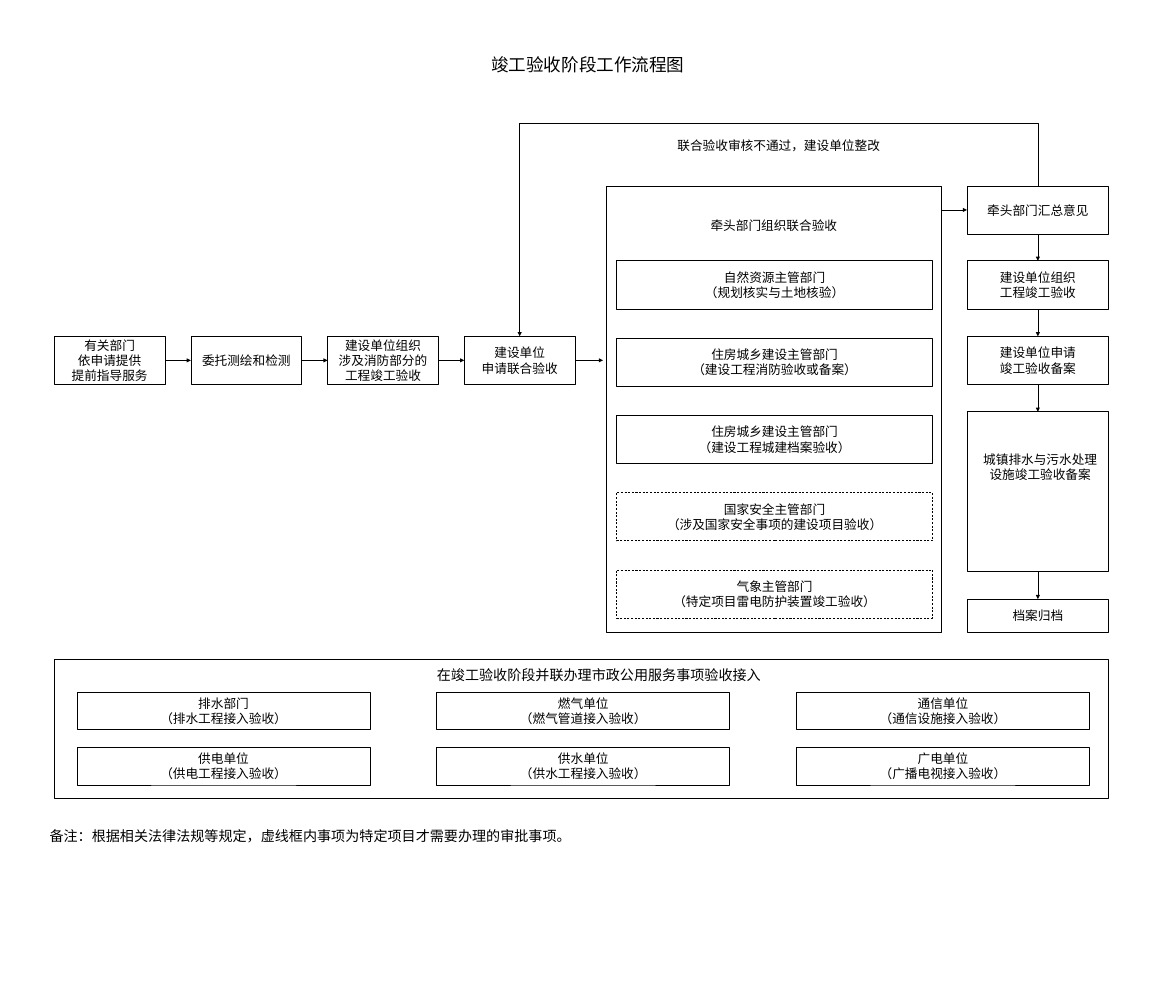
from pptx import Presentation, util as u
from pptx.dml.color import RGBColor
from pptx.enum import dml, shapes, text
from pptx.oxml import parse_xml
from pptx.oxml.ns import nsdecls, qn
from lxml import etree

# Content
TITLE = "竣工验收阶段工作流程图"
STAGES = [
    ["有关部门", "依申请提供", "提前指导服务"],
    ["委托测绘和检测"],
    ["建设单位组织", "涉及消防部分的工程竣工验收"],
    ["建设单位", "申请联合验收"],
]
JOINT = "牵头部门组织联合验收"
DEPTS = [  # lines, dashed
    (["自然资源主管部门", "（规划核实与土地核验）"], False),
    (["住房城乡建设主管部门", "（建设工程消防验收或备案）"], False),
    (["住房城乡建设主管部门", "（建设工程城建档案验收）"], False),
    (["国家安全主管部门", "（涉及国家安全事项的建设项目验收）"], True),
    (["气象主管部门", "（特定项目雷电防护装置竣工验收）"], True),
]
FINAL = [  # lines, top, height
    (["牵头部门汇总意见"], 3.67, 0.95),
    (["建设单位组织", "工程竣工验收"], 5.15, 0.95),
    (["建设单位申请", "竣工验收备案"], 6.64, 0.95),
    ([], 8.13, 3.15),
    (["档案归档"], 11.83, 0.65),
]
DRAIN = "城镇排水与污水处理设施竣工验收备案"
FAIL = "联合验收审核不通过，建设单位整改"
ACCESS = "在竣工验收阶段并联办理市政公用服务事项验收接入"
UTILS = [
    [("排水部门", "（排水工程接入验收）"), ("燃气单位", "（燃气管道接入验收）"),
     ("通信单位", "（通信设施接入验收）")],
    [("供电单位", "（供电工程接入验收）"), ("供水单位", "（供水工程接入验收）"),
     ("广电单位", "（广播电视接入验收）")],
]
NOTE = "备注：根据相关法律法规等规定，虚线框内事项为特定项目才需要办理的审批事项。"

# Style and grid, in inches
FONT = "Noto Sans CJK SC"
HEX = {"ink": "000000", "paper": "FFFFFF"}
INK = RGBColor.from_string(HEX["ink"])
STAGE = dict(x=1.07, y=6.64, w=2.19, h=0.95, step=2.7)
PANEL = (11.97, 3.67, 6.63, 8.81)
DEPT = dict(x=12.18, y=5.15, w=6.24, h=0.95, step=6.1 / 4)
LAST = dict(x=19.1, w=2.8)
UTIL = dict(x=1.52, y=13.67, w=5.79, h=0.74, col=14.21 / 2, row=1.09)
LOOP = 2.44  # height of the return line

deck = Presentation()
deck.slide_width, deck.slide_height = u.Cm(59), u.Cm(50)
page = deck.slides.add_slide(deck.slide_layouts[5])
page.background.fill.solid()
page.background.fill.fore_color.rgb = RGBColor.from_string(HEX["paper"])


def write(shape, lines, size=18, align=text.PP_ALIGN.CENTER,
          anchor=text.MSO_ANCHOR.MIDDLE, gap=None):
    frame = shape.text_frame
    frame.word_wrap = True
    frame.auto_size = text.MSO_AUTO_SIZE.NONE
    frame.vertical_anchor = anchor
    for i, line in enumerate(lines):
        para = frame.paragraphs[0] if i == 0 else frame.add_paragraph()
        para.alignment = align
        if gap:
            para.line_spacing = gap
        run = para.add_run()
        run.text = line
        run.font.size, run.font.name = u.Pt(size), FONT
        run.font.color.rgb = INK
        east = etree.SubElement(run.font._element, qn("a:ea"))
        east.set("typeface", FONT)


def label(x, y, w, h, line, **form):
    area = page.shapes.add_textbox(*map(u.Inches, (x, y, w, h)))
    write(area, [line], **{"anchor": text.MSO_ANCHOR.TOP, **form})


def box(x, y, w, h, lines=(), dashed=False):
    rect = page.shapes.add_shape(shapes.MSO_SHAPE.RECTANGLE,
                                 *map(u.Inches, (x, y, w, h)))
    rect.shadow.inherit = False
    rect.fill.background()
    rect.line.color.rgb = INK
    rect.line.width = u.Pt(0 if dashed else 1)
    if dashed:
        rect.line.dash_style = dml.MSO_LINE.DASH
    if lines:
        write(rect, lines)
    return rect


def arrow(x0, y0, x1, y1, kind=shapes.MSO_CONNECTOR.STRAIGHT):
    line = page.shapes.add_connector(kind, *map(u.Inches, (x0, y0, x1, y1)))
    line.line.color.rgb = INK
    line.line.width = u.Pt(0.5)
    tail = etree.SubElement(line.line._get_or_add_ln(), qn("a:tailEnd"))
    tail.set("type", "triangle")
    line._element.spPr.append(parse_xml(f"<a:effectLst {nsdecls('a')}/>"))
    return line


def link(start, end, out, into):
    line = arrow(0, 0, 1, 1)
    line.begin_connect(start, out)
    line.end_connect(end, into)


# Title
head = page.shapes.title
head.left, head.top, head.width, head.height = map(
    u.Inches, (6.57, 1.01, 10.08, 0.52))
write(head, [TITLE], size=25, anchor=text.MSO_ANCHOR.TOP)

# Stages before the joint acceptance
stages = [box(STAGE["x"] + i * STAGE["step"], STAGE["y"], STAGE["w"],
              STAGE["h"], lines) for i, lines in enumerate(STAGES)]
for left, right in zip(stages, stages[1:]):
    link(left, right, 3, 1)
mid = STAGE["y"] + STAGE["h"] / 2
arrow(11.36, mid, 11.91, mid).begin_connect(stages[-1], 3)

# Joint acceptance by departments
box(*PANEL)
label(13.37, 4.2, 3.83, 0.5, JOINT, anchor=text.MSO_ANCHOR.MIDDLE)
for i, (lines, dashed) in enumerate(DEPTS):
    box(DEPT["x"], DEPT["y"] + i * DEPT["step"], DEPT["w"], DEPT["h"],
        lines, dashed)

# Final steps
final = [box(LAST["x"], y, LAST["w"], h, lines) for lines, y, h in FINAL]
for upper, lower in zip(final, final[1:]):
    link(upper, lower, 2, 0)
label(19.27, 8.87, 2.55, 0.71, DRAIN)
top = FINAL[0][1]
row = top + FINAL[0][2] / 2
arrow(PANEL[0] + PANEL[2], row, LAST["x"], row).end_connect(final[0], 1)

# Return line: a bent connector turned by 270 degrees
x0, x1 = LAST["x"] + LAST["w"] / 2, STAGE["x"] + 3 * STAGE["step"] + STAGE["w"] / 2
drop, span = STAGE["y"] - top, x0 - x1
cx, cy = (x0 + x1) / 2, top + drop / 2
back = arrow(cx + drop / 2, cy + span / 2, cx - drop / 2, cy - span / 2,
             shapes.MSO_CONNECTOR.ELBOW)
back._element.spPr.find(qn("a:xfrm")).set("rot", str(270 * 60000))
geom = back._element.spPr.find(qn("a:prstGeom"))
bend = etree.SubElement(geom.find(qn("a:avLst")), qn("a:gd"))
bend.set("name", "adj1")
bend.set("fmla", f"val {round((LOOP - top) / drop * 100000)}")
label(10.34, 2.67, 10.08, 0.4, FAIL)

# Utility connections
box(1.07, 13.02, 20.82, 2.74)
label(5.31, 13.1, 13.04, 0.44, ACCESS, size=20)
for j, units in enumerate(UTILS):
    for i, lines in enumerate(units):
        box(UTIL["x"] + i * UTIL["col"], UTIL["y"] + j * UTIL["row"],
            UTIL["w"], UTIL["h"], lines)

# Note
label(0.88, 16.13, 12.72, 0.6, NOTE, size=20, align=text.PP_ALIGN.LEFT, gap=1.5)

deck.save("out.pptx")
